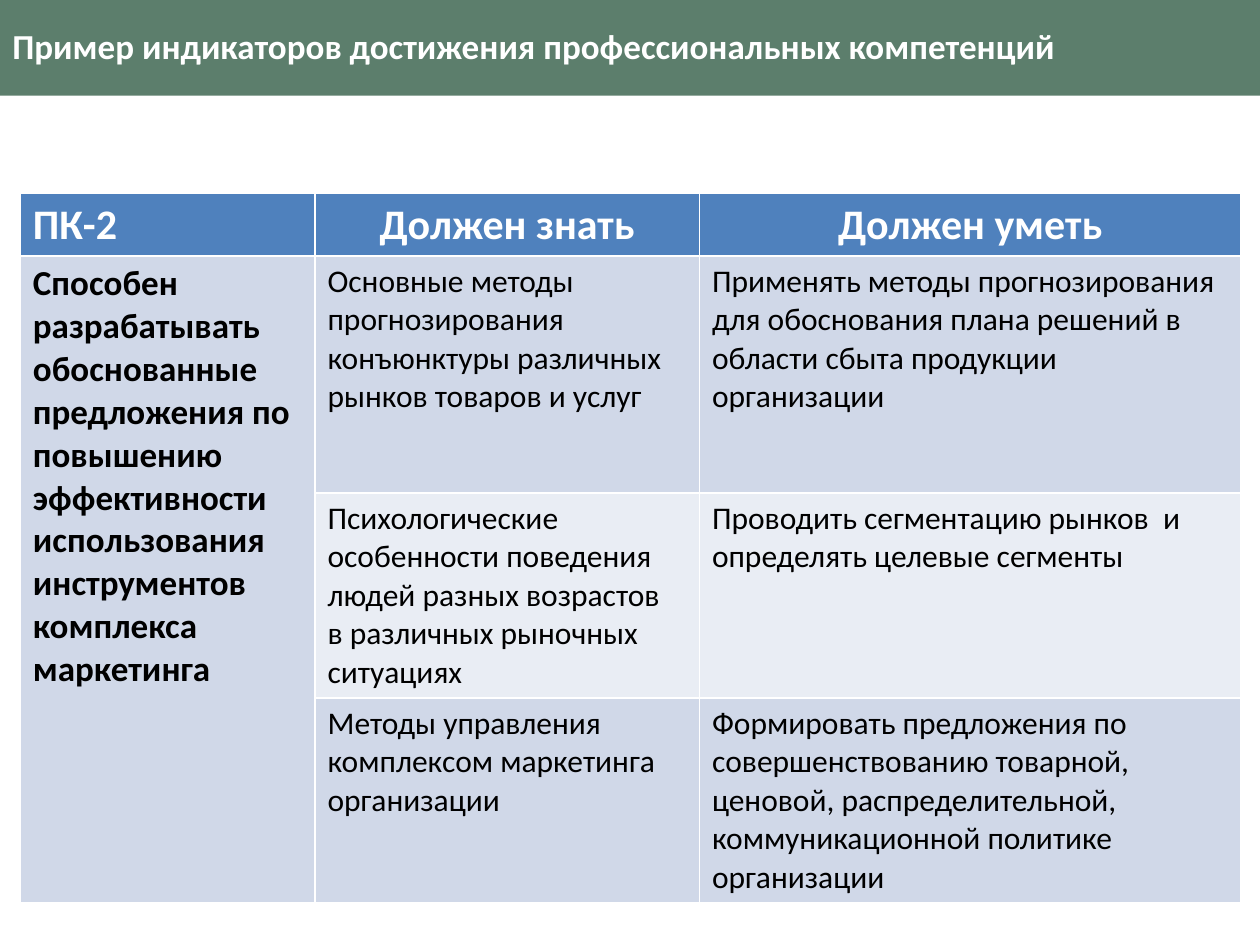
"""Build a slide with a table of professional competence indicators."""
from lxml.etree import SubElement
from pptx import Presentation
from pptx.dml.color import RGBColor
from pptx.enum.shapes import MSO_SHAPE
from pptx.enum.text import MSO_ANCHOR, PP_ALIGN
from pptx.oxml.ns import qn
from pptx.util import Cm, Pt


def paint(fill, color):
    fill.solid()
    fill.fore_color.rgb = RGBColor.from_string(color)


def write(frame, text, size, color, bold, align=PP_ALIGN.LEFT):
    para = frame.paragraphs[0]
    para.text = text
    para.alignment = align
    para.font.name = "Calibri"
    para.font.size = Pt(size)
    para.font.bold = bold
    para.font.color.rgb = RGBColor.from_string(color)


deck = Presentation()
deck.slide_width = Cm(25.4)
deck.slide_height = Cm(19.05)
page = deck.slides.add_slide(deck.slide_layouts[6])

band = page.shapes.add_shape(MSO_SHAPE.RECTANGLE, 0, 0, deck.slide_width, Cm(1.93))
band.shadow.inherit = False
band.line.fill.background()
paint(band.fill, "345E48")
band_color = band.fill._xPr.find(qn("a:solidFill"))[0]
SubElement(band_color, qn("a:alpha"), val="80000")

title = page.shapes.add_textbox(0, Cm(0.1), Cm(25.1), Cm(1.63))
title.text_frame.word_wrap = True
title.text_frame.vertical_anchor = MSO_ANCHOR.MIDDLE
write(title.text_frame, "Пример индикаторов достижения профессиональных компетенций",
      20, "FFFFFF", True)

headings = ["ПК-2", "Должен знать", "Должен уметь"]
competence = ("Способен разрабатывать обоснованные предложения по повышению "
              "эффективности использования инструментов комплекса маркетинга")
indicators = [
    ("Основные методы прогнозирования конъюнктуры различных рынков товаров и услуг",
     "Применять методы прогнозирования для обоснования плана решений в области "
     "сбыта продукции организации"),
    ("Психологические особенности поведения людей разных возрастов  в различных "
     "рыночных ситуациях",
     "Проводить сегментацию рынков  и определять целевые сегменты"),
    ("Методы управления комплексом маркетинга организации",
     "Формировать предложения по совершенствованию товарной, ценовой, "
     "распределительной, коммуникационной политике организации"),
]
column_widths = [5.94, 7.75, 10.92]
row_heights = [1.24, 4.78, 4.13, 4.13]

table = page.shapes.add_table(
    len(row_heights), len(column_widths), Cm(0.41), Cm(3.89),
    Cm(sum(column_widths)), Cm(sum(row_heights))).table
for column, width in zip(table.columns, column_widths):
    column.width = Cm(width)
for row, height in zip(table.rows, row_heights):
    row.height = Cm(height)

for index, heading in enumerate(headings):
    cell = table.cell(0, index)
    paint(cell.fill, "4F81BD")
    align = PP_ALIGN.CENTER if index else PP_ALIGN.LEFT
    write(cell.text_frame, heading, 24, "FFFFFF", True, align)

competence_cell = table.cell(1, 0)
competence_cell.merge(table.cell(3, 0))
paint(competence_cell.fill, "D0D8E8")
write(competence_cell.text_frame, competence, 20, "000000", True)

for row_index, pair in enumerate(indicators, start=1):
    for column_index, text in enumerate(pair, start=1):
        cell = table.cell(row_index, column_index)
        paint(cell.fill, "D0D8E8" if row_index % 2 else "E9EDF4")
        write(cell.text_frame, text, 18, "000000", False)

deck.save("out.pptx")
